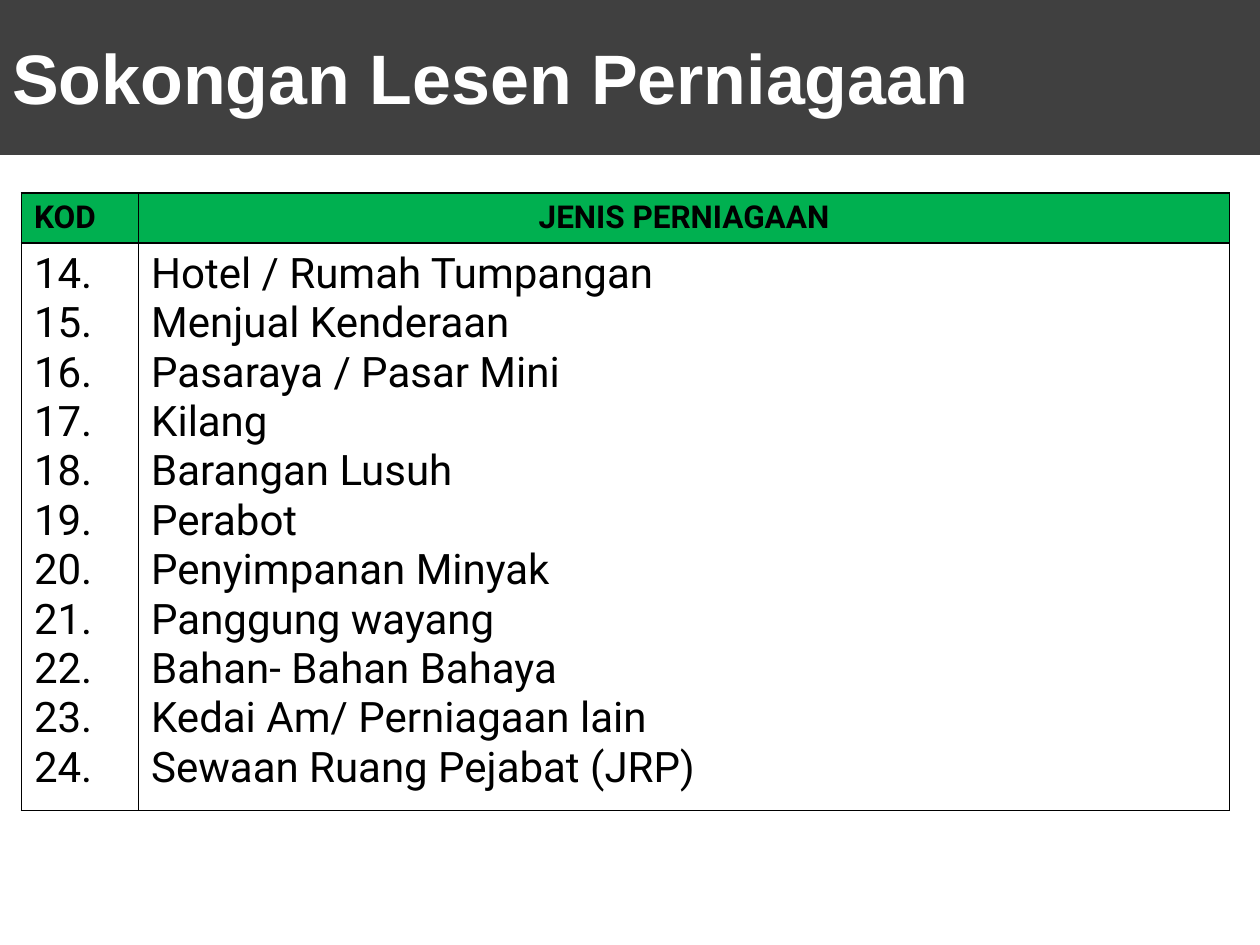
from dataclasses import dataclass

import pptx
import pptx.dml.color
import pptx.enum.shapes
import pptx.enum.text
import pptx.oxml
import pptx.oxml.ns
import pptx.util

Inches = pptx.util.Inches
RGBColor = pptx.dml.color.RGBColor
Align = pptx.enum.text.PP_ALIGN
Anchor = pptx.enum.text.MSO_ANCHOR

BLACK = RGBColor(0x00, 0x00, 0x00)
WHITE = RGBColor(0xFF, 0xFF, 0xFF)
CHARCOAL = RGBColor(0x40, 0x40, 0x40)
GREEN = RGBColor(0x00, 0xB0, 0x50)

FIRST_CODE = 14
BUSINESSES = [
    "Hotel / Rumah Tumpangan",
    "Menjual Kenderaan",
    "Pasaraya / Pasar Mini",
    "Kilang",
    "Barangan Lusuh",
    "Perabot",
    "Penyimpanan Minyak",
    "Panggung wayang",
    "Bahan- Bahan Bahaya",
    "Kedai Am/ Perniagaan lain",
    "Sewaan Ruang Pejabat (JRP)",
]


@dataclass
class Column:
    heading: str
    align: Align
    width: float
    entries: list[str]


COLUMNS = [
    Column("KOD", Align.LEFT, 0.93,
           [f"{code}." for code in range(FIRST_CODE, FIRST_CODE + len(BUSINESSES))]),
    Column("JENIS PERNIAGAAN", Align.CENTER, 8.66, BUSINESSES),
]
ROW_HEIGHTS = [0.39, 4.19]


def write_text(frame, text: str, name: str, size: float, color: RGBColor,
               bold: bool, align: Align = Align.LEFT) -> None:
    frame.text = text
    for para in frame.paragraphs:
        para.alignment = align
        for span in para.runs:
            span.font.name = name
            span.font.size = pptx.util.Pt(size)
            span.font.bold = bold
            span.font.color.rgb = color


def add_borders(cell) -> None:
    properties = cell._tc.get_or_add_tcPr()
    namespace = pptx.oxml.ns.nsdecls("a")
    for index, side in enumerate(("lnL", "lnR", "lnT", "lnB")):
        border = pptx.oxml.parse_xml(
            f'<a:{side} {namespace} w="{pptx.util.Pt(1)}"><a:solidFill>'
            f'<a:srgbClr val="{BLACK}"/></a:solidFill></a:{side}>')
        properties.insert(index, border)


def add_title(page, text: str) -> None:
    band = page.shapes.add_shape(pptx.enum.shapes.MSO_SHAPE.RECTANGLE,
                                 0, 0, Inches(10), Inches(1.23))
    band.shadow.inherit = False
    band.fill.solid()
    band.fill.fore_color.rgb = CHARCOAL
    band.line.fill.background()
    box = page.shapes.add_textbox(0, Inches(0.02), Inches(10), Inches(1.17))
    box.text_frame.word_wrap = True
    box.text_frame.vertical_anchor = Anchor.MIDDLE
    write_text(box.text_frame, text, "Arial", 40, WHITE, True)


def add_business_table(page, columns: list[Column]) -> None:
    table = page.shapes.add_table(
        len(ROW_HEIGHTS), len(columns), Inches(0.17), Inches(1.53),
        Inches(sum(column.width for column in columns)),
        Inches(sum(ROW_HEIGHTS))).table
    table.horz_banding = False
    for row, height in zip(table.rows, ROW_HEIGHTS):
        row.height = Inches(height)
    for index, column in enumerate(columns):
        table.columns[index].width = Inches(column.width)
        header, body = table.cell(0, index), table.cell(1, index)
        header.fill.solid()
        header.fill.fore_color.rgb = GREEN
        header.vertical_anchor = Anchor.MIDDLE
        body.fill.background()
        write_text(header.text_frame, column.heading, "Roboto", 18, BLACK, True, column.align)
        write_text(body.text_frame, "\n".join(column.entries), "Roboto", 24, BLACK, False)
        for cell in (header, body):
            add_borders(cell)


def main() -> None:
    deck = pptx.Presentation()
    deck.slide_width, deck.slide_height = Inches(10), Inches(7.5)
    page = deck.slides.add_slide(deck.slide_layouts[6])
    add_title(page, "Sokongan Lesen Perniagaan")
    add_business_table(page, COLUMNS)
    deck.save("out.pptx")


if __name__ == "__main__":
    main()
